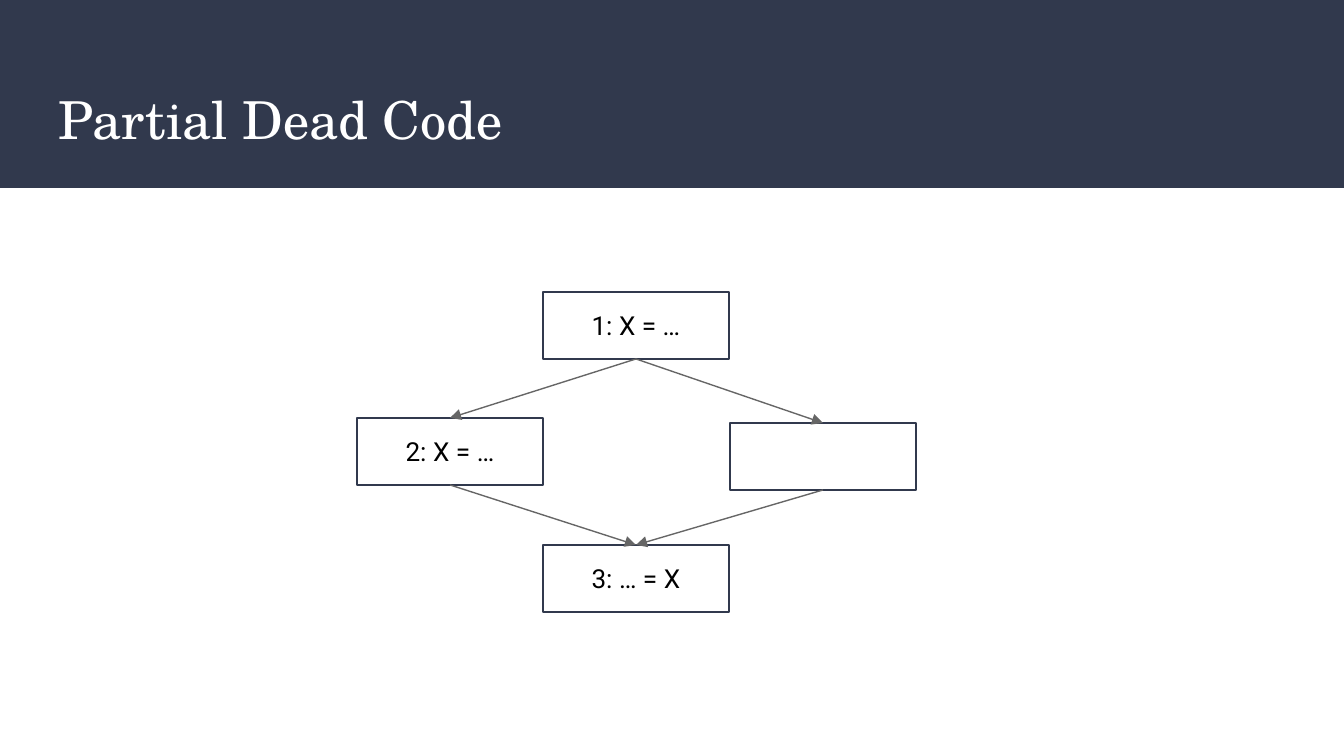
from lxml.etree import SubElement
from pptx import Presentation
from pptx.dml.color import RGBColor
from pptx.enum.shapes import MSO_CONNECTOR, MSO_SHAPE
from pptx.enum.text import MSO_ANCHOR, PP_ALIGN
from pptx.oxml.ns import qn
from pptx.util import Pt

PX = 914400 / 134.4
COLORS = {"navy": "31394D", "white": "FFFFFF", "black": "000000", "gray": "666666"}
BLOCK_WIDTH, BLOCK_HEIGHT = 186, 67
TOP_SITE, BOTTOM_SITE = 0, 2


def emu(*lengths):
    return [round(length * PX) for length in lengths]


def write(shape, text, *, font, size, color, align=PP_ALIGN.LEFT, anchor=MSO_ANCHOR.TOP):
    frame = shape.text_frame
    frame.word_wrap = True
    frame.vertical_anchor = anchor
    frame.margin_left, frame.margin_top, frame.margin_right, frame.margin_bottom = emu(13, 13, 13, 13)
    paragraph = frame.paragraphs[0]
    paragraph.alignment = align
    run = paragraph.add_run()
    run.text = text
    run.font.name = font
    run.font.size = Pt(size)
    run.font.color.rgb = RGBColor.from_string(COLORS[color])


deck = Presentation()
deck.slide_width, deck.slide_height = emu(1344, 756)
slide = deck.slides.add_slide(deck.slide_layouts[6])
shapes = slide.shapes

# Title band
band = shapes.add_shape(MSO_SHAPE.RECTANGLE, *emu(0, 0, 1344, 188))
band.shadow.inherit = False
band.fill.solid()
band.fill.fore_color.rgb = RGBColor.from_string(COLORS["navy"])
band.line.fill.background()
title = shapes.add_textbox(*emu(46, 74, 1252, 91))
write(title, "Partial Dead Code", font="TeX Gyre Schola", size=28, color="white")

# Basic blocks of the control-flow graph: text, left, top
block_specs = {
    "entry": ("1: X = …", 543, 292),
    "empty": ("", 730, 423),
    "redefine": ("2: X = …", 357, 418),
    "use": ("3: … = X", 543, 545),
}
blocks = {}
for role, (code, left, top) in block_specs.items():
    block = shapes.add_shape(MSO_SHAPE.RECTANGLE, *emu(left, top, BLOCK_WIDTH, BLOCK_HEIGHT))
    block.shadow.inherit = False
    block.fill.solid()
    block.fill.fore_color.rgb = RGBColor.from_string(COLORS["white"])
    block.line.color.rgb = RGBColor.from_string(COLORS["navy"])
    block.line.width = Pt(0.75)
    if code:
        write(block, code, font="Roboto", size=14, color="black",
              align=PP_ALIGN.CENTER, anchor=MSO_ANCHOR.MIDDLE)
    blocks[role] = block

# Control-flow edges, from the bottom of one block to the top of the next
for source, target in [("entry", "redefine"), ("entry", "empty"),
                       ("redefine", "use"), ("empty", "use")]:
    edge = shapes.add_connector(MSO_CONNECTOR.STRAIGHT, 0, 0, 0, 0)
    edge.begin_connect(blocks[source], BOTTOM_SITE)
    edge.end_connect(blocks[target], TOP_SITE)
    edge.line.color.rgb = RGBColor.from_string(COLORS["gray"])
    edge.line.width = Pt(0.75)
    SubElement(edge.line._get_or_add_ln(), qn("a:tailEnd"), type="triangle")
    SubElement(edge._element.spPr, qn("a:effectLst"))

deck.save("out.pptx")
